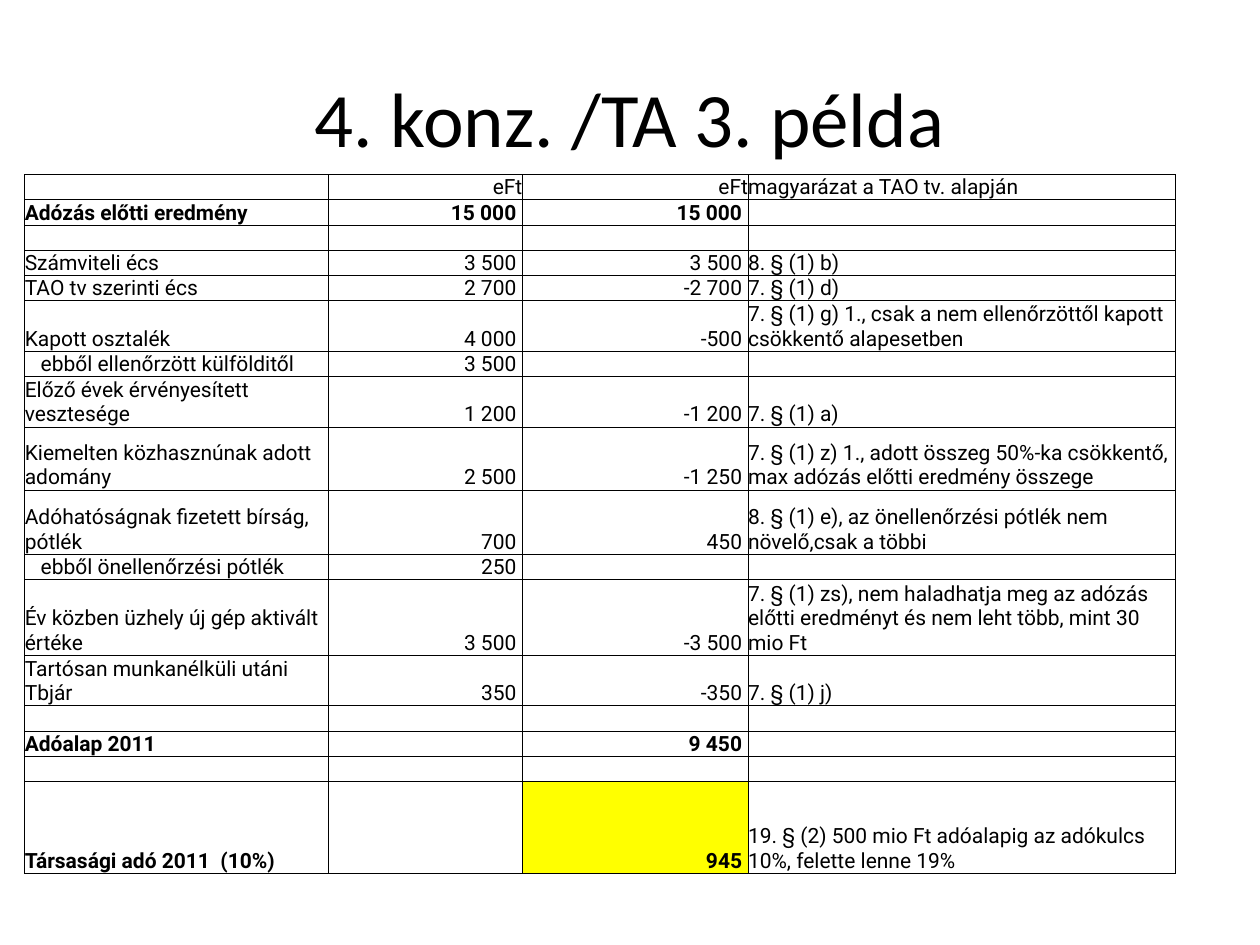
from lxml.etree import SubElement as Sub
from pptx import Presentation
from pptx.dml.color import RGBColor as RGB
from pptx.enum.text import MSO_ANCHOR as Anchor, PP_ALIGN as Align
from pptx.oxml import parse_xml
from pptx.oxml.ns import qn, nsdecls
from pptx.util import Cm, Pt


def write(frame, text, size=12, face="Roboto", color="000000", bold=False, align=Align.LEFT):
    para = frame.paragraphs[0]
    para.alignment = align
    if not text:
        # The end mark keeps an empty row as low as its font size
        Sub(para._p, qn("a:endParaRPr"), sz=str(size * 100))
        return
    run = para.add_run()
    run.text = text
    font = run.font
    font.size, font.name, font.bold = Pt(size), face, bold
    font.color.rgb = RGB.from_string(color)


def border(cell, color="000000", width=0.5):
    """Draw all four sides; must come before the cell's fill."""
    props = cell._tc.get_or_add_tcPr()
    for side in ("lnL", "lnR", "lnT", "lnB"):
        props.append(parse_xml(
            f'<a:{side} {nsdecls("a")} w="{Pt(width)}"><a:solidFill>'
            f'<a:srgbClr val="{color}"/></a:solidFill></a:{side}>'))


deck = Presentation()
deck.slide_width, deck.slide_height = Cm(25.4), Cm(19.05)
slide = deck.slides.add_slide(deck.slide_layouts[6])

title = slide.shapes.add_textbox(Cm(1.27), Cm(0.76), Cm(22.86), Cm(3.18)).text_frame
title.word_wrap = True
title.vertical_anchor = Anchor.MIDDLE
write(title, "4. konz. /TA 3. példa", size=44, face="Calibri", align=Align.CENTER)

# Row height in cm, then the four cells
LOW, TWO = 0.5, 1
BLANK = (LOW, "", "", "", "")
rows = [
    (LOW, "", "eFt", "eFt", "magyarázat a TAO tv. alapján"),
    (LOW, "Adózás előtti eredmény", "15 000", "15 000", ""),
    BLANK,
    (LOW, "Számviteli écs", "3 500", "3 500", "8. § (1) b)"),
    (LOW, "TAO tv szerinti écs", "2 700", "-2 700", "7. § (1) d)"),
    (TWO, "Kapott osztalék", "4 000", "-500",
     "7. § (1) g) 1., csak a nem ellenőrzöttől kapott csökkentő alapesetben"),
    (LOW, "ebből ellenőrzött külfölditől", "3 500", "", ""),
    (TWO, "Előző évek érvényesített vesztesége", "1 200", "-1 200", "7. § (1) a)"),
    (1.27, "Kiemelten közhasznúnak adott adomány", "2 500", "-1 250",
     "7. § (1) z) 1., adott összeg 50%-ka csökkentő, max adózás előtti eredmény összege"),
    (1.3, "Adóhatóságnak fizetett bírság, pótlék", "700", "450",
     "8. § (1) e), az önellenőrzési pótlék nem növelő,csak a többi"),
    (LOW, "ebből önellenőrzési pótlék", "250", "", ""),
    (1.5, "Év közben üzhely új gép aktivált értéke", "3 500", "-3 500",
     "7. § (1) zs), nem haladhatja meg az adózás előtti eredményt "
     "és nem leht több, mint 30 mio Ft"),
    (TWO, "Tartósan munkanélküli utáni Tbjár", "350", "-350", "7. § (1) j)"),
    BLANK,
    (LOW, "Adóalap 2011", "", "9 450", ""),
    BLANK,
    (1.85, "Társasági adó 2011  (10%)", "", "945",
     "19. § (2) 500 mio Ft adóalapig az adókulcs 10%, felette lenne 19%"),
]
widths = [6.12, 3.91, 4.55, 8.61]
totals = ("Adózás", "Adóalap", "Társasági")

high = sum(row[0] for row in rows)
table = slide.shapes.add_table(
    len(rows), len(widths), Cm(0.5), Cm(3.52), Cm(sum(widths)), Cm(high)).table
table.first_row = table.horz_banding = False
for col, width in zip(table.columns, widths):
    col.width = Cm(width)

for r, (height, *texts) in enumerate(rows):
    table.rows[r].height = Cm(height)
    total = texts[0].startswith(totals)
    for c, text in enumerate(texts):
        cell = table.cell(r, c)
        number = c in (1, 2)
        inset = c == 0 and text.startswith("ebből")
        cell.margin_top = cell.margin_bottom = 0
        cell.margin_left = Cm(0.32 if inset else 0)
        cell.margin_right = Cm(0.12 if number and r > 0 else 0)
        cell.vertical_anchor = Anchor.BOTTOM
        border(cell)
        if text == "945":
            cell.fill.solid()
            cell.fill.fore_color.rgb = RGB.from_string("FFFF00")
        else:
            cell.fill.background()
        write(cell.text_frame, text, bold=total and c < 3,
              align=Align.RIGHT if number else Align.LEFT)

deck.save("out.pptx")
